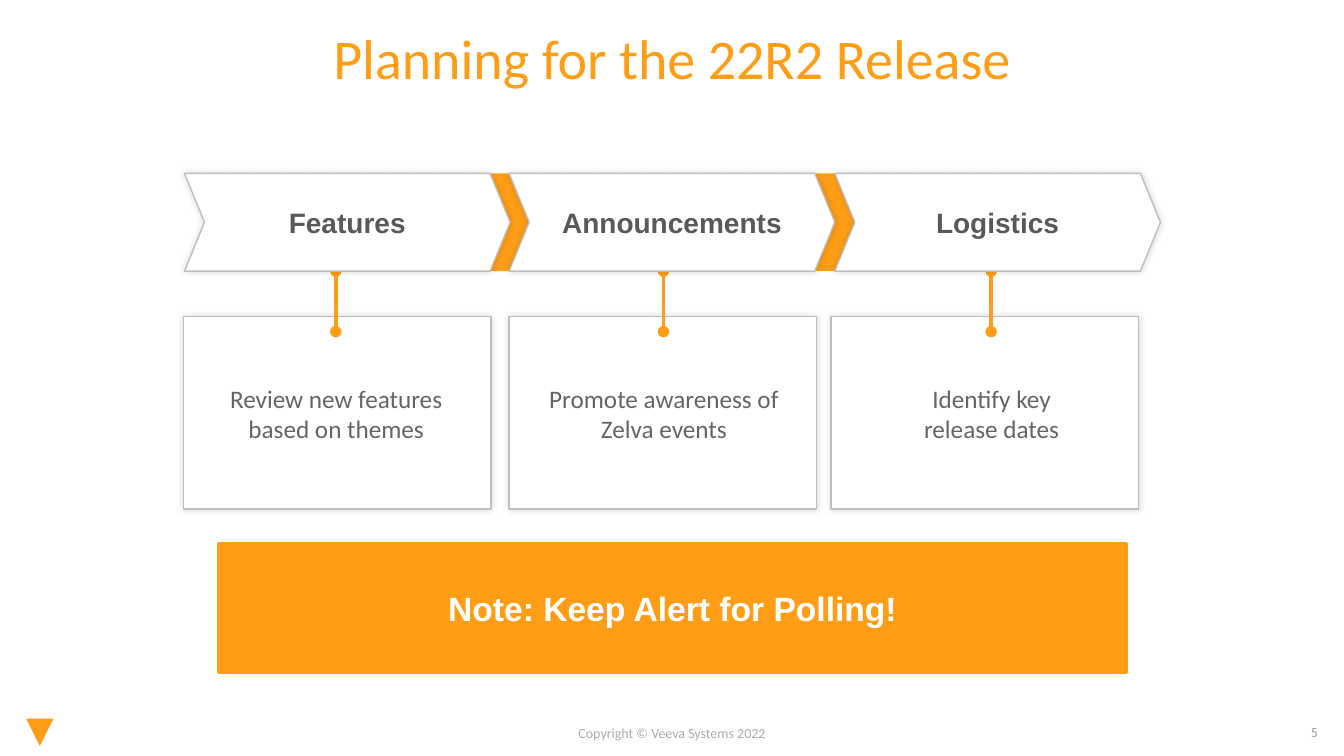
import dataclasses

import lxml.etree
import pptx
import pptx.dml.color
import pptx.enum.shapes
import pptx.enum.text
import pptx.oxml
import pptx.oxml.ns
import pptx.util

EMU_PER_PX = 9144  # 100 px to the inch
ORANGE, WHITE, BORDER = "FF9E16", "FFFFFF", "BFBFBF"
SHAPES = pptx.enum.shapes.MSO_SHAPE
ALIGN = pptx.enum.text.PP_ALIGN
ANCHOR = pptx.enum.text.MSO_ANCHOR


@dataclasses.dataclass(frozen=True)
class Area:
    left: int
    top: int
    width: int
    height: int

    def emu(self) -> list[int]:
        return [px(side) for side in dataclasses.astuple(self)]


@dataclasses.dataclass(frozen=True)
class Style:
    font: str
    size: int
    color: str
    bold: bool = False
    align: ALIGN = ALIGN.CENTER


@dataclasses.dataclass(frozen=True)
class Stage:
    name: str
    lines: tuple[str, ...]
    box_left: int


STAGES = (
    Stage("Features", ("Review new features", "based on themes"), 182),
    Stage("Announcements", ("Promote awareness of Zelva events",), 505),
    Stage("Logistics", ("Identify key", "release dates"), 824),
)
STAGE_STYLE = Style("Arial", 20, "595959", bold=True)
CAPTION_STYLE = Style("Calibri", 18, "646569")
NOTE_STYLE = Style("Arial", 24, WHITE, bold=True)
TITLE_STYLE = Style("Calibri", 40, ORANGE)
COPYRIGHT_STYLE = Style("Calibri", 10, "AEABAB")
NUMBER_STYLE = Style("Calibri", 10, "9D9EA0", align=ALIGN.RIGHT)
COLUMN_PITCH = 325  # captions and connectors


def px(length: int) -> pptx.util.Emu:
    return pptx.util.Emu(length * EMU_PER_PX)


def rgb(color: str) -> pptx.dml.color.RGBColor:
    return pptx.dml.color.RGBColor.from_string(color)


def write(frame, lines: tuple[str, ...], style: Style, anchor=ANCHOR.TOP) -> None:
    frame.text = "\n".join(lines)
    frame.word_wrap = True
    frame.vertical_anchor = anchor
    for para in frame.paragraphs:
        para.alignment = style.align
        para.font.name = style.font
        para.font.size = pptx.util.Pt(style.size)
        para.font.bold = style.bold
        para.font.color.rgb = rgb(style.color)


def add_label(page, area: Area, lines: tuple[str, ...], style: Style) -> None:
    write(page.shapes.add_textbox(*area.emu()).text_frame, lines, style)


def add_box(page, kind: SHAPES, area: Area, fill: str, line: str = "", weight: int = 1):
    box = page.shapes.add_shape(kind, *area.emu())
    box.shadow.inherit = False
    box.fill.solid()
    box.fill.fore_color.rgb = rgb(fill)
    if line:
        box.line.color.rgb = rgb(line)
        box.line.width = pptx.util.Pt(weight)
    else:
        box.line.fill.background()
    return box


def add_card(page, kind: SHAPES, area: Area):
    """White bordered shape with a soft glow-like shadow."""
    card = add_box(page, kind, area, WHITE, BORDER)
    effects = card._element.spPr.find(pptx.oxml.ns.qn("a:effectLst"))
    effects.append(pptx.oxml.parse_xml(
        f'<a:outerShdw {pptx.oxml.ns.nsdecls("a")} blurRad="63500" dist="0" dir="0">'
        '<a:srgbClr val="000000"><a:alpha val="15000"/></a:srgbClr></a:outerShdw>'))
    return card


def add_dotted_end_line(page, x: int, top: int, bottom: int) -> None:
    link = page.shapes.add_connector(
        pptx.enum.shapes.MSO_CONNECTOR.STRAIGHT, px(x), px(top), px(x), px(bottom))
    link.line.color.rgb = rgb(ORANGE)
    link.line.width = pptx.util.Pt(2.75)
    qn = pptx.oxml.ns.qn
    properties = link._element.spPr
    for end in ("a:headEnd", "a:tailEnd"):
        lxml.etree.SubElement(properties.find(qn("a:ln")), qn(end), type="oval")
    lxml.etree.SubElement(properties, qn("a:effectLst"))


def add_title(page, text: str) -> None:
    title = page.shapes.title
    title.left, title.top, title.width, title.height = Area(30, 11, 1273, 107).emu()
    write(title.text_frame, (text,), TITLE_STYLE, ANCHOR.MIDDLE)
    title.text_frame.auto_size = pptx.enum.text.MSO_AUTO_SIZE.NONE
    title.text_frame.paragraphs[0].line_spacing = 0.7


def add_footer(page) -> None:
    mark = add_box(page, SHAPES.ISOSCELES_TRIANGLE, Area(26, 713, 27, 27), ORANGE)
    mark.rotation = 180
    add_label(page, Area(1205, 713, 112, 27), ("5",), NUMBER_STYLE)
    add_label(page, Area(480, 714, 373, 27), ("Copyright © Veeva Systems 2022",),
              COPYRIGHT_STYLE)


def add_stages(page) -> None:
    # Orange band seen between the chevrons
    add_box(page, SHAPES.RECTANGLE, Area(219, 172, 910, 97), ORANGE)

    # Cards, captions and connectors
    for column, stage in enumerate(STAGES):
        shift = column * COLUMN_PITCH
        add_card(page, SHAPES.RECTANGLE, Area(stage.box_left, 314, 305, 191))
        add_label(page, Area(195 + shift, 375, 277, 71), stage.lines, CAPTION_STYLE)
        add_dotted_end_line(page, 333 + shift, 269, 329)

    # Chevrons cover the upper connector ends
    for column, stage in enumerate(STAGES):
        area = Area(183 + column * 645 // 2, 172, 323, 97)
        chevron = add_card(page, SHAPES.CHEVRON, area)
        chevron.adjustments[0] = 0.205
        write(chevron.text_frame, (stage.name,), STAGE_STYLE, ANCHOR.MIDDLE)


def main() -> None:
    deck = pptx.Presentation()
    deck.slide_width, deck.slide_height = px(1333), px(750)
    page = deck.slides.add_slide(deck.slide_layouts.get_by_name("Title Only"))

    add_footer(page)
    add_title(page, "Planning for the 22R2 Release")
    add_stages(page)

    # Closing note
    note = add_box(page, SHAPES.RECTANGLE, Area(217, 539, 900, 128), ORANGE, ORANGE, 2)
    write(note.text_frame, ("Note: Keep Alert for Polling!",), NOTE_STYLE, ANCHOR.MIDDLE)

    deck.save("out.pptx")


if __name__ == "__main__":
    main()
